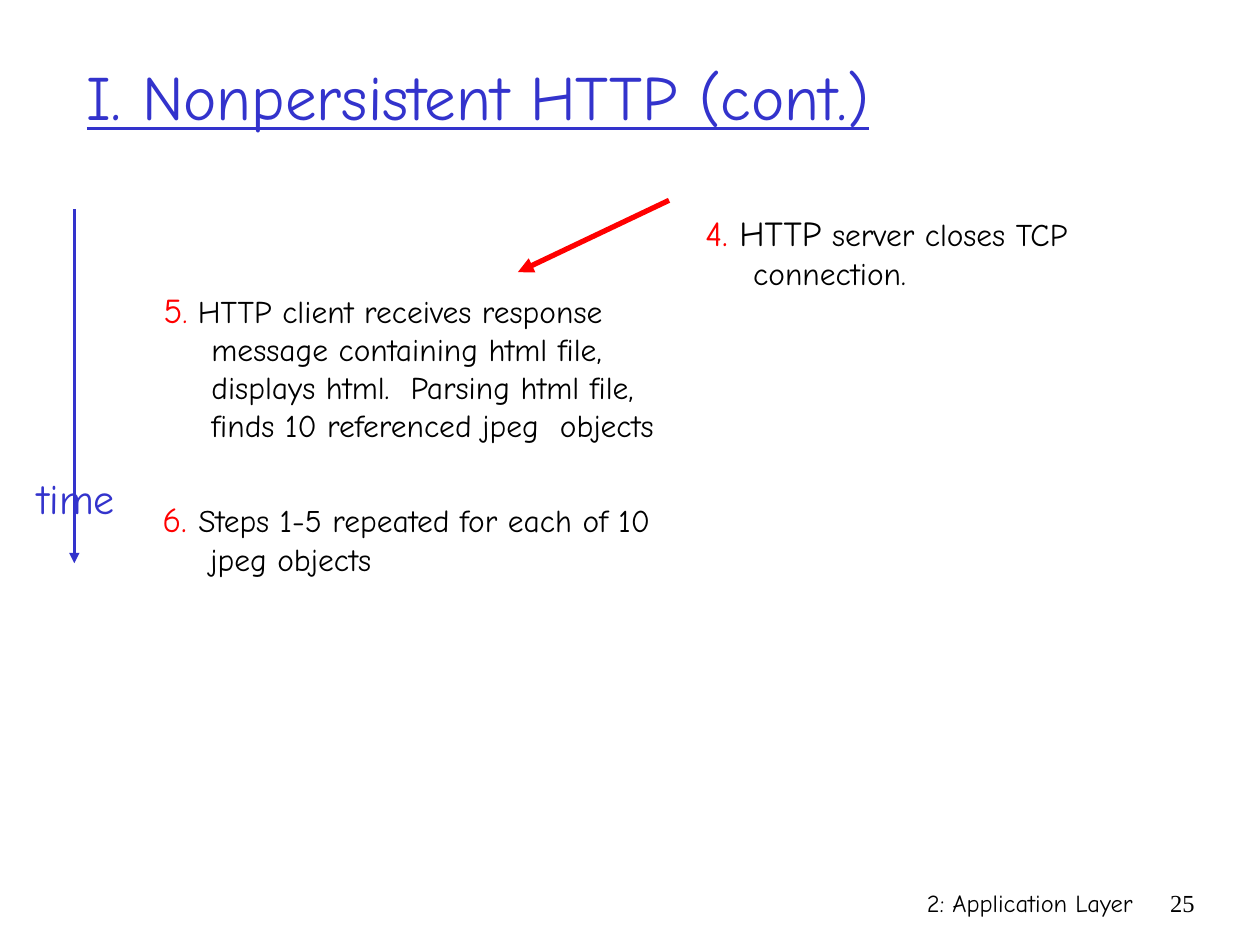
import pptx
import pptx.util
import pptx.dml.color
import pptx.enum.shapes
import pptx.enum.text
import pptx.oxml.ns
from dataclasses import dataclass
from lxml import etree
from pptx.util import Inches

ALIGN = pptx.enum.text.PP_ALIGN
ANCHOR = pptx.enum.text.MSO_ANCHOR


@dataclass(frozen=True)
class Theme:
    blue: str = "3333CC"
    red: str = "FF0000"
    black: str = "000000"
    font: str = "Comic Neue"
    number_font: str = "Times New Roman"
    title: int = 36
    label: int = 24
    large: int = 20
    body: int = 18
    footer: int = 14


THEME = Theme()


def color(value):
    return pptx.dml.color.RGBColor.from_string(value)


def add_span(para, text, *, size=THEME.body, fill=THEME.black,
             font=THEME.font, underline=None):
    span = para.add_run()
    span.text = text
    span.font.size = pptx.util.Pt(size)
    span.font.name = font
    span.font.color.rgb = color(fill)
    span.font.underline = underline


def place(shape, left, top, width, height):
    shape.left, shape.top = Inches(left), Inches(top)
    shape.width, shape.height = Inches(width), Inches(height)


def add_title(page, text):
    title = page.shapes.title
    place(title, 0.59, 0.28, 8.5, 0.95)
    title.text_frame.vertical_anchor = ANCHOR.MIDDLE
    para = title.text_frame.paragraphs[0]
    para.alignment = ALIGN.LEFT
    add_span(para, text, size=THEME.title, fill=THEME.blue, underline=True)


def add_text(page, bounds, spans, *, align=ALIGN.LEFT, wrap=True):
    """Add a text box; spans is a list of (text, format) pairs."""
    box = page.shapes.add_textbox(*map(Inches, bounds))
    box.text_frame.word_wrap = wrap
    para = box.text_frame.paragraphs[0]
    para.alignment = align
    for text, style in spans:
        add_span(para, text, **style)
    return para


def add_step(page, left, top, height, spans):
    """Add a numbered step with a hanging indent."""
    para = add_text(page, (left, top, 4.17, height), spans)
    para.space_before = pptx.util.Pt(4)
    properties = para._p.get_or_add_pPr()
    properties.set("marL", str(Inches(0.38)))
    properties.set("indent", str(-Inches(0.38)))


def add_arrow(page, start, end, *, fill, width):
    arrow = page.shapes.add_connector(
        pptx.enum.shapes.MSO_CONNECTOR.STRAIGHT,
        *map(Inches, start + end))
    arrow.line.color.rgb = color(fill)
    arrow.line.width = pptx.util.Pt(width)
    qn = pptx.oxml.ns.qn
    etree.SubElement(arrow.line._get_or_add_ln(), qn("a:tailEnd"), type="triangle")
    etree.SubElement(arrow._element.spPr, qn("a:effectLst"))


def main():
    deck = pptx.Presentation()
    deck.slide_width, deck.slide_height = Inches(10), Inches(7.5)
    page = deck.slides.add_slide(deck.slide_layouts[5])
    add_title(page, "I. Nonpersistent HTTP (cont.)")

    # Footer and page number
    add_text(page, (5.92, 7, 3.17, 0.5),
             [("2: Application Layer", dict(size=THEME.footer))], align=ALIGN.RIGHT)
    add_text(page, (9.08, 7, 0.5, 0.5),
             [("25", dict(size=THEME.footer, font=THEME.number_font))],
             align=ALIGN.RIGHT)

    # Steps: client on the left, server on the right
    number = dict(size=THEME.large, fill=THEME.red)
    add_step(page, 1.2, 2.24, 1.68, [
        ("5", number), (".", dict(fill=THEME.red)),
        (" HTTP client receives response message containing html file, "
         "displays html.  Parsing html file, finds 10 referenced jpeg  objects", {})])
    add_step(page, 1.19, 3.9, 0.73, [
        ("6. ", number), ("Steps 1-5 repeated for each of 10 jpeg objects", {})])
    add_step(page, 5.5, 1.63, 0.8, [
        ("4.", number), (" HTTP", dict(size=THEME.large)),
        (" server closes TCP connection.", {})])

    # Time axis and the message from server to client
    add_arrow(page, (0.59, 1.66), (0.59, 4.47), fill=THEME.blue, width=1.5)
    add_text(page, (0.16, 3.7, 0.89, 0.5),
             [("time", dict(size=THEME.label, fill=THEME.blue))],
             align=ALIGN.CENTER, wrap=False)
    add_arrow(page, (5.31, 1.59), (4.11, 2.16), fill=THEME.red, width=3)

    deck.save("out.pptx")


if __name__ == "__main__":
    main()
